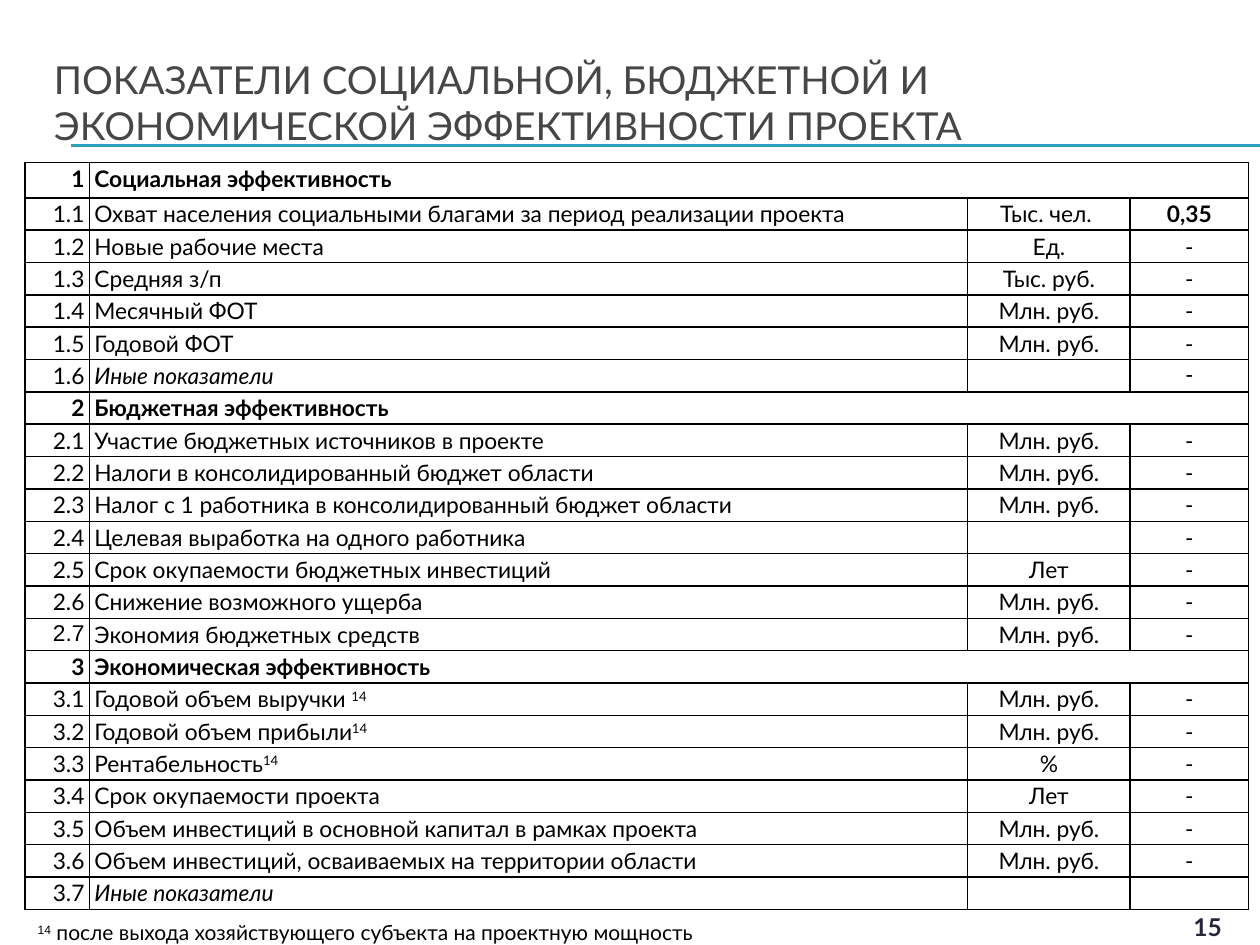
from lxml import etree
from pptx import Presentation, util as u
from pptx.dml.color import RGBColor
from pptx.enum import shapes, text
from pptx.oxml.ns import qn

WIDTH, HEIGHT = 10, 7.5
FONT, ALT_FONT = "Lato", "Arial"
BLACK, WHITE, GREY, TEAL, NAVY = "000000", "FFFFFF", "464646", "2DA2BF", "24263C"
LEFT, CENTER, RIGHT = text.PP_ALIGN.LEFT, text.PP_ALIGN.CENTER, text.PP_ALIGN.RIGHT

TITLE = "ПОКАЗАТЕЛИ СОЦИАЛЬНОЙ, БЮДЖЕТНОЙ И ЭКОНОМИЧЕСКОЙ ЭФФЕКТИВНОСТИ ПРОЕКТА"
MLN = "Млн. руб."
OTHER = "Иные показатели"
NOTE_MARK = "14"
# Each section: heading, then (indicator, unit, value); "^" precedes a superscript.
SECTIONS = [
    ("Социальная эффективность", [
        ("Охват населения социальными благами за период реализации проекта",
         "Тыс. чел. ", "0,35"),
        ("Новые рабочие места", "Ед.", "-"),
        ("Средняя з/п", "Тыс. руб.", "-"),
        ("Месячный ФОТ", MLN, "-"),
        ("Годовой ФОТ", MLN, "-"),
        (OTHER, "", "-"),
    ]),
    ("Бюджетная эффективность", [
        ("Участие бюджетных источников в проекте", MLN, "-"),
        ("Налоги в консолидированный бюджет области", MLN, "-"),
        ("Налог с 1 работника в консолидированный бюджет области", MLN, "-"),
        ("Целевая выработка на одного работника", "", "-"),
        ("Срок окупаемости бюджетных инвестиций", "Лет", "-"),
        ("Снижение возможного ущерба", MLN, "-"),
        ("Экономия бюджетных средств", MLN, "-"),
    ]),
    ("Экономическая эффективность", [
        ("Годовой объем выручки ^" + NOTE_MARK, MLN, "-"),
        ("Годовой объем прибыли^" + NOTE_MARK, MLN, "-"),
        ("Рентабельность^" + NOTE_MARK, "%", "-"),
        ("Срок окупаемости проекта", "Лет", "-"),
        ("Объем инвестиций в основной капитал в рамках проекта", MLN, "-"),
        ("Объем инвестиций, осваиваемых на территории области", MLN, "-"),
        (OTHER, "", ""),
    ]),
]
COLUMNS = [0.51, 6.97, 1.29, 0.94]
ALIGNMENTS = [RIGHT, LEFT, CENTER, CENTER]
HEADING_ROW = 0.28
ARIAL_CELLS = {("1.6", 3), ("2.7", 0)}


def rgb(color):
    return RGBColor.from_string(color)


def add_run(paragraph, words, size, color=BLACK, font=FONT, bold=False, italic=False,
            raised=False):
    run = paragraph.add_run()
    run.text = words
    run.font.size, run.font.name = u.Pt(size), font
    run.font.bold, run.font.italic = bold, italic
    run.font.color.rgb = rgb(color)
    if raised:
        run.font._element.set("baseline", "30000")


def add_text_box(slide, box):
    frame = slide.shapes.add_textbox(*map(u.Inches, box)).text_frame
    frame.word_wrap = True
    return frame


def add_title(slide, box):
    frame = add_text_box(slide, box)
    frame.vertical_anchor = text.MSO_ANCHOR.MIDDLE
    frame.margin_top, frame.margin_bottom = 0, u.Inches(0.36)
    add_run(frame.paragraphs[0], TITLE, 22, GREY)


def add_rules(slide, left, top):
    """Draw the double rule that runs to the right edge."""
    for y in (top, top + 0.01):
        rule = slide.shapes.add_connector(
            shapes.MSO_CONNECTOR.STRAIGHT, *map(u.Inches, (left, y, WIDTH, y)))
        rule.line.color.rgb = rgb(TEAL)
        rule.line.width = u.Pt(0.75)
        etree.SubElement(rule._element.spPr, qn("a:effectLst"))


def format_cell(cell):
    cell.margin_left = cell.margin_right = u.Inches(0.04)
    cell.margin_top = cell.margin_bottom = u.Inches(0.02)
    properties = cell._tc.get_or_add_tcPr()
    for side in ("a:lnL", "a:lnR", "a:lnT", "a:lnB"):
        border = etree.SubElement(properties, qn(side), w=str(u.Pt(1)))
        fill = etree.SubElement(border, qn("a:solidFill"))
        etree.SubElement(fill, qn("a:srgbClr"), val=BLACK)
    cell.fill.solid()
    cell.fill.fore_color.rgb = rgb(WHITE)


def fill_cell(cell, words, alignment, **style):
    format_cell(cell)
    paragraph = cell.text_frame.paragraphs[0]
    paragraph.alignment = alignment
    if not words:
        etree.SubElement(paragraph._p, qn("a:endParaRPr"), sz="1300")
        return
    for index, part in enumerate(words.split("^")):
        add_run(paragraph, part, 13, raised=index > 0, **style)


def table_rows():
    for number, (heading, indicators) in enumerate(SECTIONS, 1):
        yield True, (str(number), heading, "", "")
        for item, indicator in enumerate(indicators, 1):
            yield False, (f"{number}.{item}", *indicator)


def add_indicator_table(slide, box):
    rows = list(table_rows())
    table = slide.shapes.add_table(len(rows), len(COLUMNS), *map(u.Inches, box)).table
    table.first_row = table.horz_banding = False
    for column, width in zip(table.columns, COLUMNS):
        column.width = u.Inches(width)
    row_height = (box[3] - HEADING_ROW) / (len(rows) - 1)
    for index, (is_heading, values) in enumerate(rows):
        table.rows[index].height = u.Inches(row_height if index else HEADING_ROW)
        for column, (words, alignment) in enumerate(zip(values, ALIGNMENTS)):
            fill_cell(table.cell(index, column), words, alignment,
                      font=ALT_FONT if (values[0], column) in ARIAL_CELLS else FONT,
                      bold=is_heading or (column == 3 and words != "-"),
                      italic=words == OTHER)
        if is_heading:
            table.cell(index, 1).merge(table.cell(index, len(COLUMNS) - 1))


def add_footnote(slide, box):
    paragraph = add_text_box(slide, box).paragraphs[0]
    add_run(paragraph, NOTE_MARK, 12, font=ALT_FONT, raised=True)
    add_run(paragraph, " после выхода хозяйствующего субъекта на проектную мощность", 12)


def add_page_number(slide, box):
    paragraph = add_text_box(slide, box).paragraphs[0]
    paragraph.alignment = CENTER
    add_run(paragraph, "15", 14, NAVY, bold=True)


def main():
    presentation = Presentation()
    presentation.slide_width, presentation.slide_height = u.Inches(WIDTH), u.Inches(HEIGHT)
    slide = presentation.slides.add_slide(presentation.slide_layouts[6])
    add_rules(slide, 0.56, 1.15)
    add_title(slide, (0.33, 0.53, 9.5, 0.92))
    add_indicator_table(slide, (0.2, 1.29, sum(COLUMNS), 5.91))
    add_footnote(slide, (0.2, 7.25, 6.69, 0.3))
    add_page_number(slide, (9.3, 7.19, 0.57, 0.31))
    presentation.save("out.pptx")


if __name__ == "__main__":
    main()
